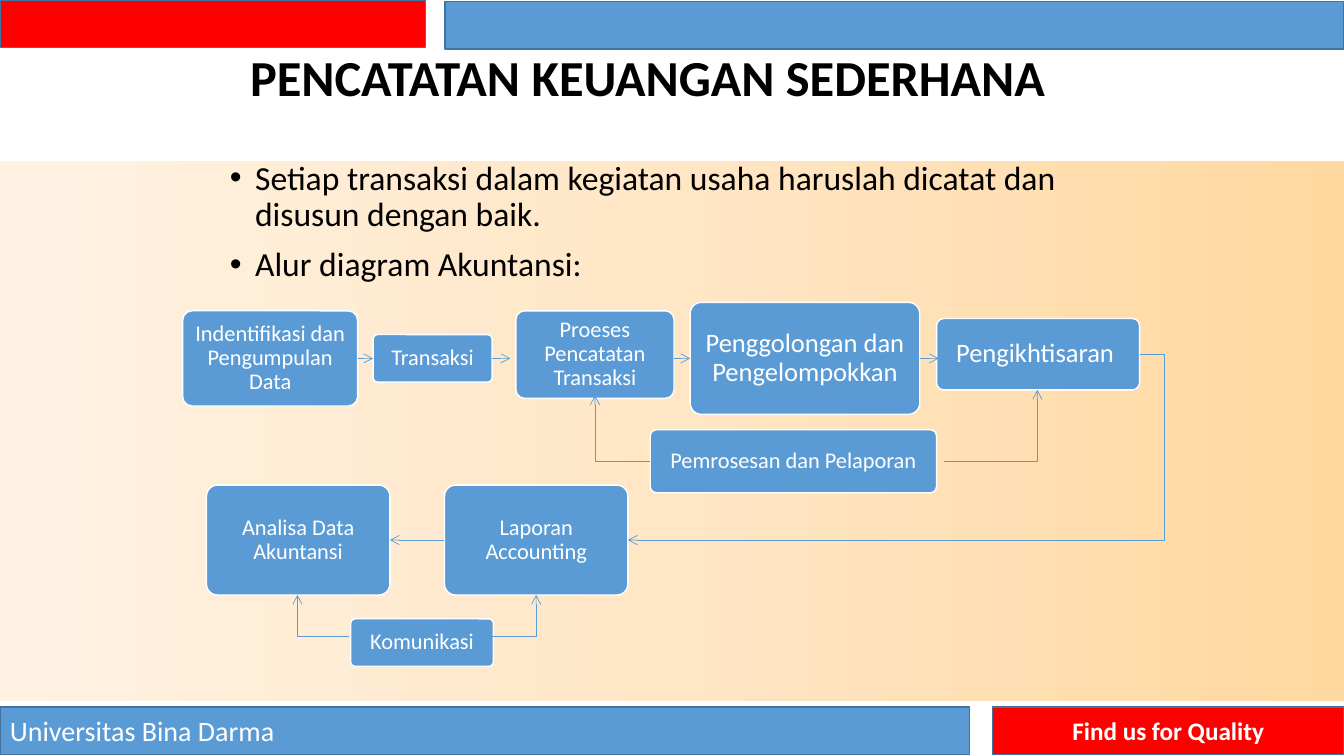
from copy import deepcopy
from dataclasses import dataclass

from pptx import Presentation
from pptx.dml.color import RGBColor as RGB
from pptx.enum.shapes import MSO_CONNECTOR as Link, MSO_SHAPE as Form
from pptx.enum.text import MSO_ANCHOR as Anchor, MSO_AUTO_SIZE as Fit, PP_ALIGN as Align
from pptx.oxml.ns import qn
from pptx.oxml.xmlchemy import OxmlElement as Tag
from pptx.util import Pt


@dataclass(frozen=True)
class Theme:
    """Colours, font and type sizes of the slide."""
    blue: RGB = RGB(0x5B, 0x9B, 0xD5)
    edge: RGB = RGB(0x43, 0x73, 0x9E)
    red: RGB = RGB(0xFF, 0, 0)
    white: RGB = RGB(0xFF, 0xFF, 0xFF)
    black: RGB = RGB(0, 0, 0)
    glow: tuple = (RGB(0xFF, 0xF2, 0xE3), RGB(0xFF, 0xE6, 0xC5), RGB(0xFF, 0xD8, 0xA0))
    font: str = "Calibri"
    title: int = 36
    body: int = 24
    foot: int = 20
    motto: int = 18
    large: int = 19
    small: int = 16


T = Theme()

NODES = {
    "ident": ("Indentifikasi dan Pengumpulan Data", (0.5, 6, 125, 68), T.small),
    "trans": ("Transaksi", (136.5, 23, 85, 34), T.small),
    "record": ("Proeses Pencatatan Transaksi", (238.5, 6, 113, 62.5), T.small),
    "group": ("Penggolongan dan Pengelompokkan", (363, 0, 164, 80), T.large),
    "recap": ("Pengikhtisaran ", (539, 11.5, 145, 51), T.large),
    "study": ("Analisa Data Akuntansi", (17.5, 130.5, 131, 78.5), T.small),
    "report": ("Laporan Accounting", (187.5, 130.5, 131, 78.5), T.small),
    "process": ("Pemrosesan dan Pelaporan", (334.5, 91, 204.5, 45), T.small),
    "talk": ("Komunikasi", (120.5, 226, 102, 34), T.small),
}
STRAIGHT = [
    (("ident", 3), ("trans", 1)),
    (("trans", 3), (234.5, 40)),
    ((351.5, 40), ("group", 1)),
    (("group", 3), (540.5, 40)),
    (("report", 1), ("study", 3)),
]
CORNERS = [
    ((334.5, 113.5), (295, 66.5)),
    ((544.5, 113.5), (611, 62.5)),
    ((220, 238.5), (253, 209)),
    ((119, 238.5), (82.5, 209)),
]
RETURN = ((684, 37), (318.5, 169.75))


def style(para, size, color, align=Align.LEFT, bold=False):
    """Set the type and alignment of a paragraph."""
    para.alignment = align
    font = para.font
    font.name, font.size, font.bold = T.font, Pt(size), bold
    font.color.rgb = color


def block(slide, box, fill, line, form=Form.RECTANGLE):
    """Draw a filled shape without a shadow."""
    shape = slide.shapes.add_shape(form, *map(Pt, box))
    shape.shadow.inherit = False
    shape.fill.solid()
    shape.fill.fore_color.rgb = fill
    shape.line.color.rgb = line
    shape.line.width = Pt(1)
    return shape


def label(shape, text, size, align=Align.CENTER, bold=False):
    """Write white text in a shape."""
    frame = shape.text_frame
    frame.word_wrap = True
    frame.vertical_anchor = Anchor.MIDDLE
    para = frame.paragraphs[0]
    para.text = text
    style(para, size, T.white, align, bold)
    return frame


def glow(slide, box):
    """Draw the shaded field behind the content."""
    field = slide.shapes.add_shape(Form.RECTANGLE, *map(Pt, box))
    field.shadow.inherit = False
    field.line.fill.background()
    field.fill.gradient()
    field.fill.gradient_angle = 0
    stops = field.element.find(".//" + qn("a:gsLst"))
    stops.insert(1, deepcopy(stops[0]))
    for i, (stop, color) in enumerate(zip(field.fill.gradient_stops, T.glow)):
        stop.color.rgb = color
        stop.position = i / 2


def header(slide, box):
    """Draw the red and blue bars at the top."""
    x, y, w, h = box
    block(slide, (x, y, 304, h), T.red, T.edge)
    block(slide, (x + 318, y + 1, w - 318, h), T.blue, T.edge)


def footer(slide, box):
    """Draw the bars with the school and its motto."""
    x, y, w, h = box
    name = block(slide, (x, y, 692.5, h), T.blue, T.edge)
    label(name, "Universitas Bina Darma", T.foot, Align.LEFT)
    motto = block(slide, (x + 709, y, w - 709, h), T.red, T.edge)
    label(motto, "Find us for Quality", T.motto, bold=True)


def place(slide, holder, box):
    """Move a placeholder to its box, in front of the bars."""
    slide.shapes.element.append(holder.element)
    holder.left, holder.top, holder.width, holder.height = map(Pt, box)
    frame = holder.text_frame
    frame.word_wrap = True
    frame.auto_size = Fit.NONE
    return frame


def heading(slide, box):
    """Fill the title."""
    frame = place(slide, slide.shapes.title, box)
    frame.vertical_anchor = Anchor.MIDDLE
    para = frame.paragraphs[0]
    para.text = "PENCATATAN KEUANGAN SEDERHANA"
    para.line_spacing = 0.9
    style(para, T.title, T.black, Align.CENTER, True)


def points(slide, box):
    """Fill the bullet list."""
    frame = place(slide, slide.placeholders[1], box)
    frame.text = ("Setiap transaksi dalam kegiatan usaha haruslah dicatat dan disusun dengan baik.\n"
                  "Alur diagram Akuntansi:")
    for i, para in enumerate(frame.paragraphs):
        props = para._p.get_or_add_pPr()
        props.set("marL", str(Pt(18)))
        props.set("indent", str(-Pt(18)))
        mark = Tag("a:buChar")
        mark.set("char", "•")
        props.append(mark)
        para.line_spacing = 0.9
        para.space_before = Pt(10 * i)
        style(para, T.body, T.black)


def arrow(slide, kind, start, end):
    """Draw a thin line with an open arrowhead."""
    line = slide.shapes.add_connector(kind, *map(Pt, start + end))
    line.line.color.rgb = T.blue
    line.line.width = Pt(0.5)
    tip = Tag("a:tailEnd")
    tip.set("type", "arrow")
    props = line.element.spPr
    props.find(qn("a:ln")).append(tip)
    props.append(Tag("a:effectLst"))
    return line


def flow(slide, box):
    """Draw the accounting flow chart."""
    left, top = box[:2]
    nodes = {}
    for key, (text, (x, y, w, h), size) in NODES.items():
        node = block(slide, (left + x, top + y, w, h), T.blue, T.white, Form.ROUNDED_RECTANGLE)
        node.adjustments[0] = 0.1
        frame = label(node, text, size)
        frame.paragraphs[0].line_spacing = 0.9
        frame.margin_left = frame.margin_right = Pt(5)
        frame.margin_top = frame.margin_bottom = Pt(5)
        nodes[key] = node

    def spot(end):
        """Give the slide position of a free end."""
        return (left, top) if end[0] in nodes else (left + end[0], top + end[1])

    for start, end in STRAIGHT:
        line = arrow(slide, Link.STRAIGHT, spot(start), spot(end))
        for join, (key, side) in ((line.begin_connect, start), (line.end_connect, end)):
            if key in nodes:
                join(nodes[key], side)
    for start, end in CORNERS:
        bend = arrow(slide, Link.ELBOW, spot(start), spot(end))
        bend.element.spPr.find(qn("a:prstGeom")).set("prst", "bentConnector2")
    loop = arrow(slide, Link.ELBOW, *map(spot, RETURN))
    guide = Tag("a:gd")
    guide.set("name", "adj1")
    guide.set("fmla", "val -4900")
    loop.element.find(".//" + qn("a:avLst")).append(guide)


def main():
    """Build and save the slide."""
    deck = Presentation()
    deck.slide_width, deck.slide_height = Pt(960), Pt(540)
    slide = deck.slides.add_slide(deck.slide_layouts[1])
    glow(slide, (0, 115, 960, 386))
    header(slide, (0, 0, 960, 34))
    footer(slide, (0, 505, 960, 34))
    heading(slide, (151, 31.5, 623.5, 51))
    points(slide, (157, 111.5, 648, 356.5))
    flow(slide, (130, 216, 709, 260))
    deck.save("out.pptx")


if __name__ == "__main__":
    main()
